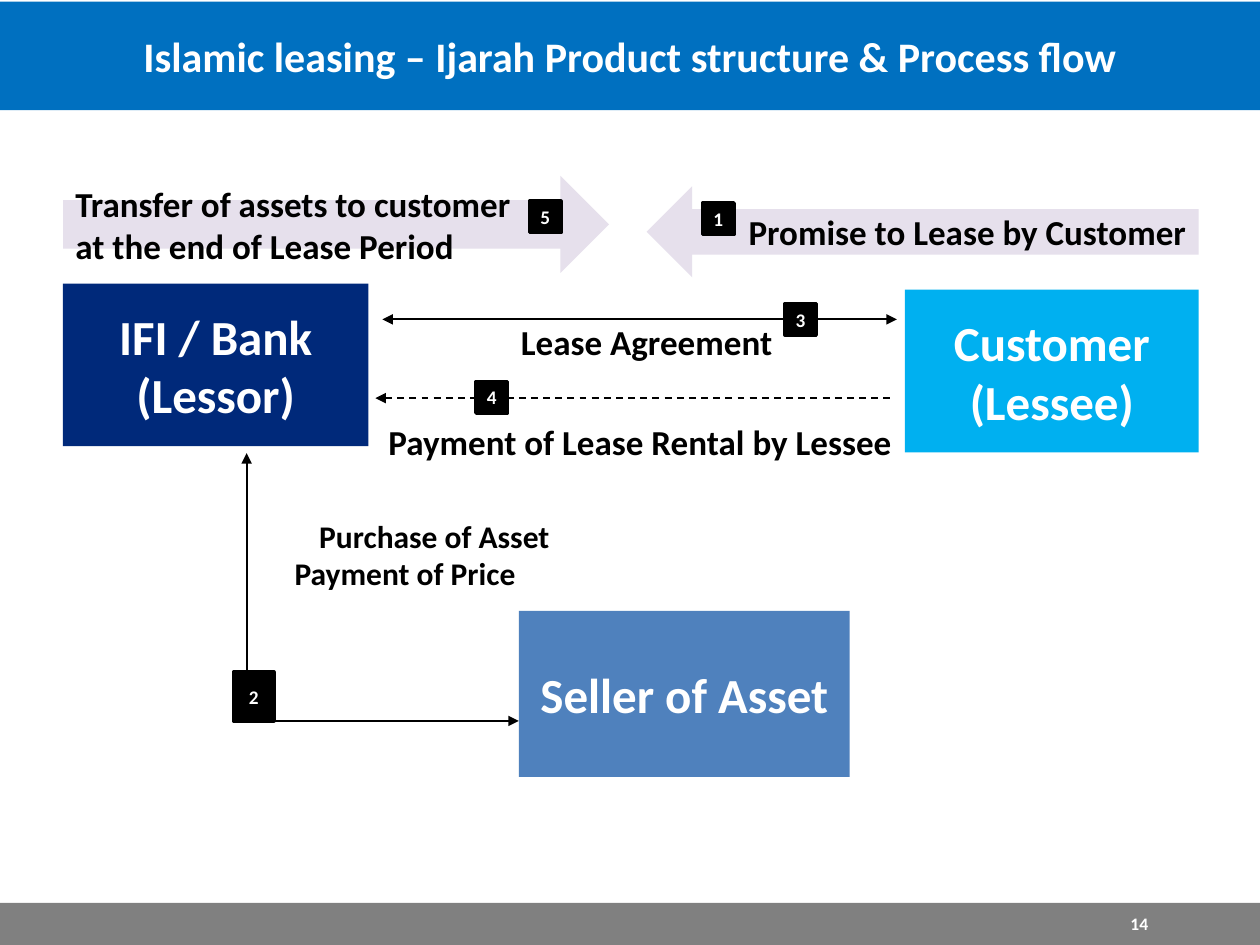
from lxml import etree
from pptx import Presentation
from pptx.dml.color import RGBColor
from pptx.enum import dml, shapes, text
from pptx.oxml.ns import qn
from pptx.util import Pt

WHITE = RGBColor(255, 255, 255)
BLACK = RGBColor(0, 0, 0)
GREY = RGBColor(0x80, 0x80, 0x80)
LILAC = RGBColor(0xE6, 0xE0, 0xEC)
NAVY = RGBColor(0x00, 0x29, 0x7A)
SKY = RGBColor(0x00, 0xB0, 0xF0)
STEEL = RGBColor(0x4F, 0x81, 0xBD)
BLUE = RGBColor(0x00, 0x70, 0xC0)

KIND = shapes.MSO_SHAPE
LINK = shapes.MSO_CONNECTOR
ALIGN = text.PP_ALIGN


def write(shape, lines, size, color, align=ALIGN.CENTER, inset=7.2):
    frame = shape.text_frame
    frame.word_wrap = True
    frame.vertical_anchor = text.MSO_ANCHOR.MIDDLE
    frame.margin_left = frame.margin_right = Pt(inset)
    frame.margin_top = frame.margin_bottom = Pt(0)
    for i, line in enumerate(lines):
        para = frame.paragraphs[0] if i == 0 else frame.add_paragraph()
        para.text = line
        para.alignment = align
        font = para.font
        font.name, font.size, font.bold = "Calibri", Pt(size), True
        font.color.rgb = color


def block(slide, box, fill, kind=KIND.RECTANGLE):
    shape = slide.shapes.add_shape(kind, *map(Pt, box))
    shape.shadow.inherit = False
    shape.fill.solid()
    shape.fill.fore_color.rgb = fill
    shape.line.fill.background()
    return shape


def label(slide, box, words, size, color=BLACK):
    shape = slide.shapes.add_textbox(*map(Pt, box))
    write(shape, [words], size, color, inset=0)


def badge(slide, num, left, top, width=18, height=18):
    shape = block(slide, (left, top, width, height), BLACK)
    shape.line.color.rgb = BLACK
    shape.line.width = Pt(2)
    write(shape, [num], 11, WHITE, inset=0)


def arrow(slide, start, end, kind=LINK.STRAIGHT, both=True, dash=False):
    link = slide.shapes.add_connector(kind, *map(Pt, start + end))
    link.line.color.rgb = BLACK
    link.line.width = Pt(1)
    if dash:
        link.line.dash_style = dml.MSO_LINE.DASH
    props = link.line._get_or_add_ln()
    for tag in ("a:headEnd", "a:tailEnd") if both else ("a:headEnd",):
        etree.SubElement(props, qn(tag), type="triangle")
    etree.SubElement(link._element.spPr, qn("a:effectLst"))
    if kind == LINK.ELBOW:  # one bend only
        link._element.spPr.find(qn("a:prstGeom")).set("prst", "bentConnector2")


def main():
    deck = Presentation()
    deck.slide_width, deck.slide_height = Pt(720), Pt(540)
    slide = deck.slides.add_slide(deck.slide_layouts[6])

    # Footer
    block(slide, (0, 516, 720, 24), GREY)
    label(slide, (606, 518.5, 90, 18), "14", 10, WHITE)

    # Promise and transfer arrows
    promise = block(slide, (369.5, 106.5, 315.5, 52), LILAC, KIND.LEFT_ARROW)
    write(promise, ["Promise to Lease by Customer"], 20, BLACK, ALIGN.RIGHT)
    handover = block(slide, (36, 100.5, 312, 55.5), LILAC, KIND.RIGHT_ARROW)
    write(handover, ["Transfer of assets to customer",
                     "at the end of Lease Period"], 20, BLACK, ALIGN.LEFT)

    # Parties
    for box, fill, lines in (
        ((36, 162, 174.5, 93), NAVY, ["IFI / Bank", "(Lessor)"]),
        ((517, 165.5, 168, 93), SKY, ["Customer", "(Lessee)"]),
        ((296.5, 349, 189, 95), STEEL, ["Seller of Asset"]),
    ):
        write(block(slide, box, fill), lines, 28, WHITE)

    # Flows
    arrow(slide, (296.5, 412), (141, 259), LINK.ELBOW)
    arrow(slide, (218.5, 182.5), (512.5, 182.5))
    arrow(slide, (214.5, 227.5), (508.5, 227.5), both=False, dash=True)

    # Flow labels
    label(slide, (156.5, 267, 183.5, 79), "Purchase of Asset", 18)
    label(slide, (156.5, 320, 150, 15), "Payment of Price", 18)
    label(slide, (283.5, 184, 172, 22), "Lease Agreement", 20)
    label(slide, (214.5, 240, 302.5, 25),
          "Payment of Lease Rental by Lessee", 20)

    # Step numbers
    badge(slide, "1", 401.5, 116)
    badge(slide, "5", 302.5, 115)
    badge(slide, "3", 448.5, 173.5)
    badge(slide, "4", 272, 218)
    badge(slide, "2", 133.5, 384, 23, 28)

    # Title
    title = block(slide, (0, 1, 720, 62), BLUE)
    write(title, ["Islamic leasing – Ijarah Product structure & Process flow"],
          24, WHITE)

    deck.save("out.pptx")


if __name__ == "__main__":
    main()
